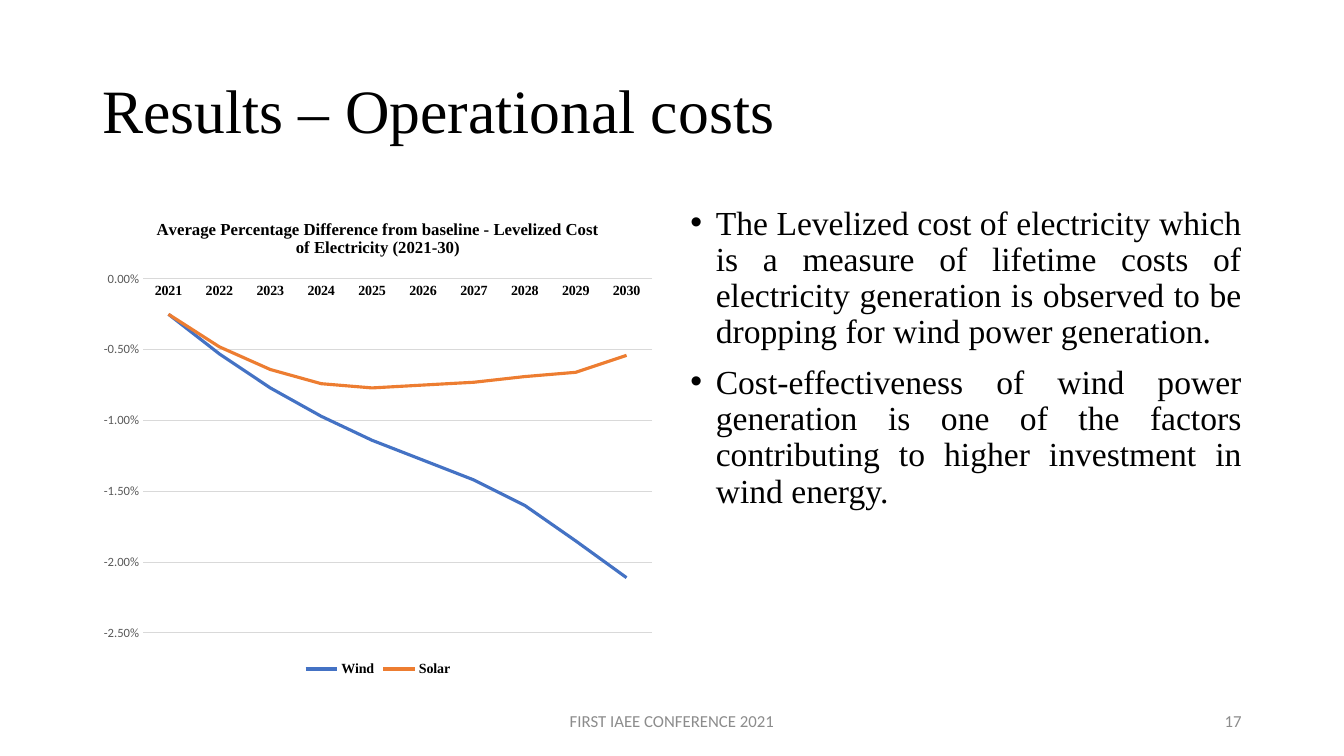
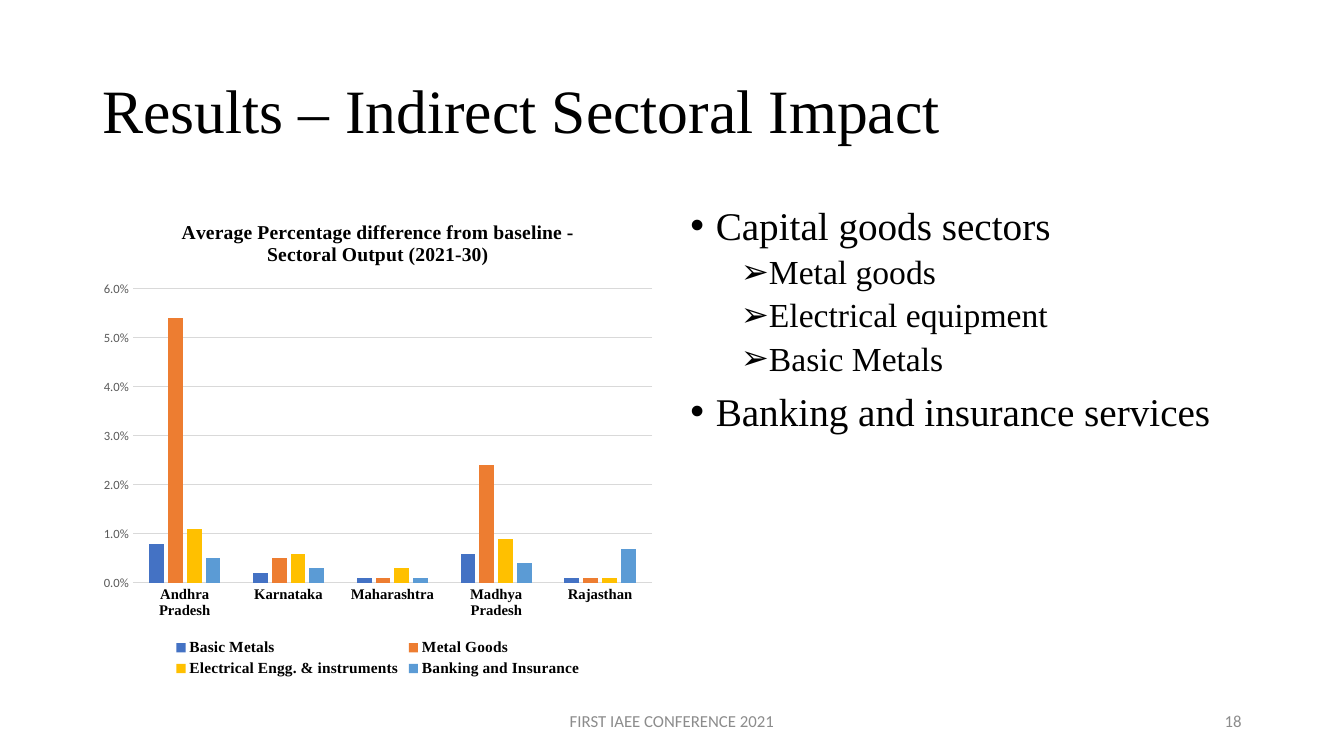
from lxml import etree
from pptx import Presentation
from pptx.chart.data import CategoryChartData
from pptx.dml.color import RGBColor
from pptx.enum.chart import XL_CHART_TYPE, XL_LEGEND_POSITION, XL_TICK_MARK
from pptx.enum.text import MSO_ANCHOR, PP_ALIGN
from pptx.oxml.ns import qn
from pptx.util import Cm, Pt

LINE, COLUMN = XL_CHART_TYPE.LINE, XL_CHART_TYPE.COLUMN_CLUSTERED
BOTTOM = XL_LEGEND_POSITION.BOTTOM
NO_TICK = XL_TICK_MARK.NONE
TOP, MIDDLE = MSO_ANCHOR.TOP, MSO_ANCHOR.MIDDLE
LEFT, CENTER = PP_ALIGN.LEFT, PP_ALIGN.CENTER
RIGHT, JUSTIFY = PP_ALIGN.RIGHT, PP_ALIGN.JUSTIFY

SERIF, SANS = "Times New Roman", "Calibri"
COLORS = {
    "text": "000000", "footer": "8C8C8C", "label": "595959", "grid": "D9D9D9",
    "blue": "4472C4", "orange": "ED7D31", "gold": "FFC000", "sky": "5B9BD5",
}
BOXES = {
    "title": (2.33, 1.01, 29.21, 3.68),
    "chart": (2.33, 5.07, 14.39, 12.09),
    "body": (17.15, 5.07, 14.39, 12.09),
    "footer": (11.22, 17.65, 11.43, 1.01),
    "number": (23.92, 17.65, 7.62, 1.01),
}
LEVELS = [("•", 0.64, 10), ("➢", 1.91, 5)]
HANG = 0.64
FOOTER = "FIRST IAEE CONFERENCE 2021"
FIRST = 17

SLIDES = [
    {
        "title": "Results – Operational costs",
        "points": [
            (0, 24, "The Levelized cost of electricity which is a measure of lifetime costs "
                    "of electricity generation is observed to be dropping for wind power "
                    "generation."),
            (0, 24, "Cost-effectiveness of wind power generation is one of the factors "
                    "contributing to higher investment in wind energy."),
        ],
        "chart": {
            "kind": LINE,
            "title": "Average Percentage Difference from baseline - "
                     "Levelized Cost of Electricity (2021-30)",
            "sizes": {"title": 12, "cats": 10, "legend": 10},
            "scale": (-0.025, 0, 0.005, "0.00%"),
            "cats": [str(year) for year in range(2021, 2031)],
            "series": [
                ("Wind", "blue", [-0.0025, -0.0053, -0.0077, -0.0097, -0.0114,
                                  -0.0128, -0.0142, -0.016, -0.0185, -0.0211]),
                ("Solar", "orange", [-0.0025, -0.0048, -0.0064, -0.0074, -0.0077,
                                     -0.0075, -0.0073, -0.0069, -0.0066, -0.0054]),
            ],
        },
    },
    {
        "title": "Results – Indirect Sectoral Impact",
        "points": [
            (0, 28, "Capital goods sectors"),
            (1, 24, "Metal goods"),
            (1, 24, "Electrical equipment"),
            (1, 24, "Basic Metals"),
            (0, 28, "Banking and insurance services"),
        ],
        "chart": {
            "kind": COLUMN,
            "title": "Average Percentage difference from baseline - "
                     "Sectoral Output (2021-30)",
            "sizes": {"title": 14, "cats": 10.5, "legend": 11},
            "scale": (0, 0.06, 0.01, "0.0%"),
            "cats": ["Andhra Pradesh", "Karnataka", "Maharashtra",
                     "Madhya Pradesh", "Rajasthan"],
            "series": [
                ("Basic Metals", "blue", [0.008, 0.002, 0.001, 0.006, 0.001]),
                ("Metal Goods", "orange", [0.054, 0.005, 0.001, 0.024, 0.001]),
                ("Electrical Engg. & instruments", "gold",
                 [0.011, 0.006, 0.003, 0.009, 0.001]),
                ("Banking and Insurance", "sky", [0.005, 0.003, 0.001, 0.004, 0.007]),
            ],
        },
    },
]


def rgb(name):
    return RGBColor.from_string(COLORS[name])


def place(name):
    return [Cm(n) for n in BOXES[name]]


def style(font, size, face=SERIF, color="text", bold=False):
    font.size, font.name, font.bold = Pt(size), face, bold
    font.color.rgb = rgb(color)


def stroke(line, color, width):
    line.color.rgb = rgb(color)
    line.width = Pt(width)


def add_box(slide, name, anchor):
    frame = slide.shapes.add_textbox(*place(name)).text_frame
    frame.word_wrap = True
    frame.vertical_anchor = anchor
    return frame


def write(para, text, align, size, face=SERIF, color="text"):
    para.alignment = align
    run = para.add_run()
    run.text = text
    style(run.font, size, face, color)


def add_line(slide, name, text, align, size, face, color, space=1.0):
    para = add_box(slide, name, MIDDLE).paragraphs[0]
    para.line_spacing = space
    write(para, text, align, size, face, color)


def add_points(slide, points):
    frame = add_box(slide, "body", TOP)
    for i, (level, size, text) in enumerate(points):
        para = frame.add_paragraph() if i else frame.paragraphs[0]
        mark, left, gap = LEVELS[level]
        para.level = level
        para.line_spacing = 0.9
        para.space_before = Pt(gap)
        props = para._p.get_or_add_pPr()
        props.set("marL", str(Cm(left)))
        props.set("indent", str(-Cm(HANG)))
        etree.SubElement(props, qn("a:buFont")).set("typeface", "Arial")
        etree.SubElement(props, qn("a:buChar")).set("char", mark)
        write(para, text, JUSTIFY, size)


def add_graph(slide, info):
    low, high, step, form = info["scale"]
    sizes = info["sizes"]
    data = CategoryChartData(number_format=form)
    data.categories = info["cats"]
    for name, _, values in info["series"]:
        data.add_series(name, values)
    chart = slide.shapes.add_chart(info["kind"], *place("chart"), data).chart
    style(chart.font, 10, SANS)

    chart.has_title = True
    para = chart.chart_title.text_frame.paragraphs[0]
    run = para.add_run()
    run.text = info["title"]
    style(run.font, sizes["title"], bold=True)
    chart.chart_title.include_in_layout = False

    chart.has_legend = True
    chart.legend.position = BOTTOM
    chart.legend.include_in_layout = False
    style(chart.legend.font, sizes["legend"], bold=True)

    cats, vals = chart.category_axis, chart.value_axis
    for axis in (cats, vals):
        axis.major_tick_mark = axis.minor_tick_mark = NO_TICK
    style(cats.tick_labels.font, sizes["cats"], bold=True)
    stroke(cats.format.line, "grid", 0.75)
    vals.minimum_scale, vals.maximum_scale, vals.major_unit = low, high, step
    style(vals.tick_labels.font, 9, SANS, "label")
    vals.tick_labels.number_format = form
    vals.tick_labels.number_format_is_linked = False
    vals.format.line.fill.background()
    stroke(vals.major_gridlines.format.line, "grid", 0.75)

    plot = chart.plots[0]
    plot.vary_by_categories = False
    if info["kind"] == COLUMN:
        plot.gap_width, plot.overlap = 219, -27
    for series, (_, color, _) in zip(plot.series, info["series"]):
        if info["kind"] == LINE:
            series.smooth = False
            stroke(series.format.line, color, 2.25)
        else:
            series.format.fill.solid()
            series.format.fill.fore_color.rgb = rgb(color)


def main():
    deck = Presentation()
    deck.slide_width, deck.slide_height = Cm(33.87), Cm(19.05)
    for number, page in enumerate(SLIDES, FIRST):
        slide = deck.slides.add_slide(deck.slide_layouts[6])
        add_line(slide, "title", page["title"], LEFT, 44, SERIF, "text", 0.9)
        add_points(slide, page["points"])
        add_graph(slide, page["chart"])
        add_line(slide, "footer", FOOTER, CENTER, 12, SANS, "footer")
        add_line(slide, "number", str(number), RIGHT, 12, SANS, "footer")
    deck.save("out.pptx")


if __name__ == "__main__":
    main()
